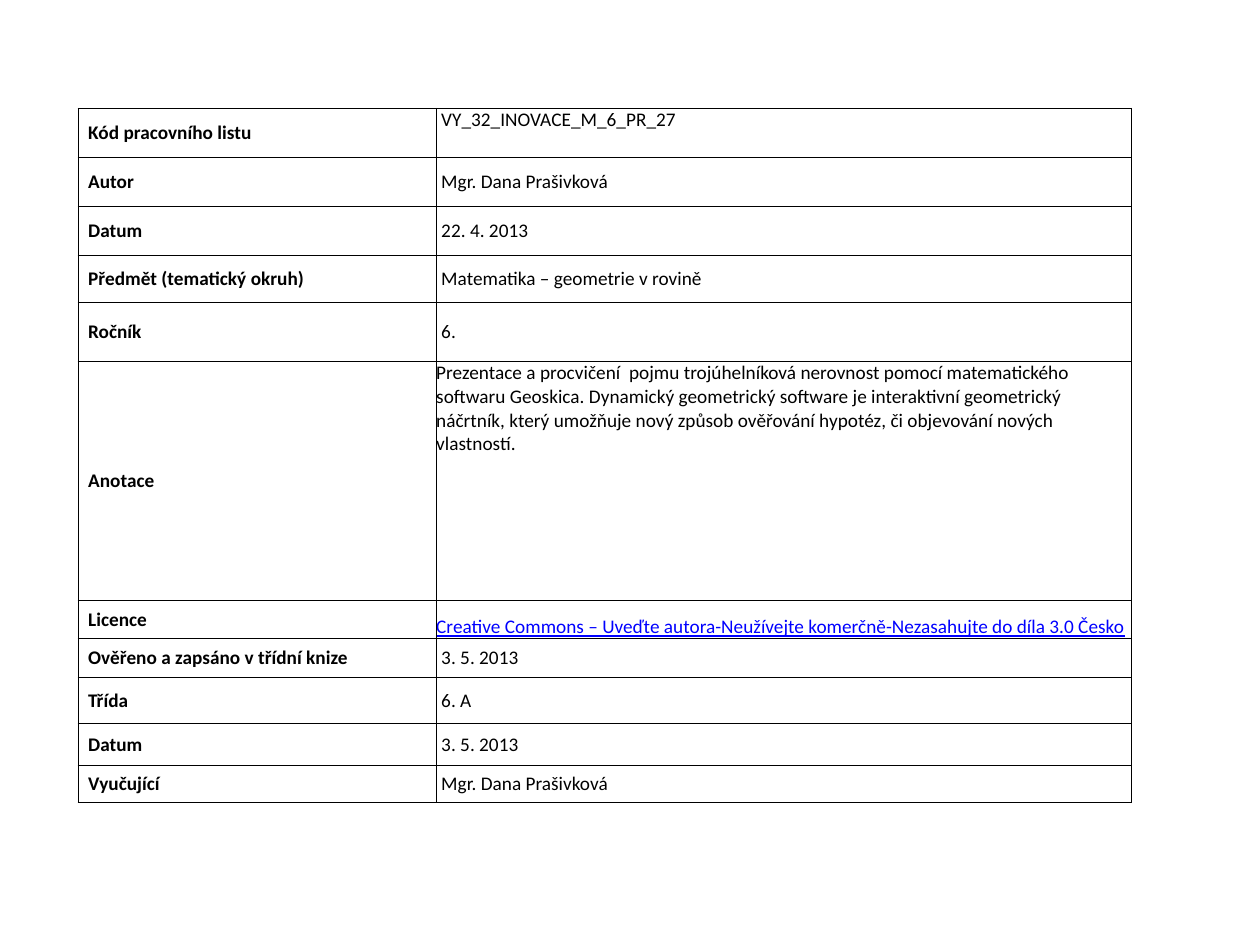
from lxml import etree
from pptx import Presentation
from pptx.dml.color import RGBColor
from pptx.enum.text import MSO_ANCHOR
from pptx.oxml.ns import qn
from pptx.util import Inches, Pt

TOP, MIDDLE, BOTTOM = MSO_ANCHOR.TOP, MSO_ANCHOR.MIDDLE, MSO_ANCHOR.BOTTOM
BLACK, WHITE, LINK_BLUE = "000000", "FFFFFF", "0000FF"
FONT, TEXT_SIZE, BORDER_WIDTH = "Calibri", Pt(11), Pt(0.5)
LABEL_INDENT, VALUE_INDENT = 0.08, 0.04
LABEL_SHARE = 0.34

ANNOTATION = (
    "Prezentace a procvičení  pojmu trojúhelníková nerovnost pomocí matematického "
    "softwaru Geoskica. Dynamický geometrický software je interaktivní geometrický "
    "náčrtník, který umožňuje nový způsob ověřování hypotéz, či objevování nových "
    "vlastností."
)
LICENCE = "Creative Commons – Uveďte autora-Neužívejte komerčně-Nezasahujte do díla 3.0 Česko"

WORKSHEET_ROWS = [
    ("Kód pracovního listu", "VY_32_INOVACE_M_6_PR_27", 0.39, {"anchor": TOP}),
    ("Autor", "Mgr. Dana Prašivková", 0.39, {}),
    ("Datum", "22. 4. 2013", 0.39, {}),
    ("Předmět (tematický okruh)", "Matematika – geometrie v rovině", 0.37, {}),
    ("Ročník", "6.", 0.47, {}),
    ("Anotace", ANNOTATION, 1.9, {"anchor": TOP, "indent": 0}),
    ("Licence", LICENCE, 0.31,
     {"anchor": BOTTOM, "indent": 0, "color": LINK_BLUE, "underline": True}),
    ("Ověřeno a zapsáno v třídní knize", "3. 5. 2013", 0.31, {}),
    ("Třída", "6. A", 0.36, {}),
    ("Datum", "3. 5. 2013", 0.34, {}),
    ("Vyučující", "Mgr. Dana Prašivková", 0.29, {}),
]


def rgb(hex_color):
    """Return the colour for a hex string."""
    return RGBColor.from_string(hex_color)


def draw_borders(cell):
    """Draw a thin black line on all four sides of a cell."""
    properties = cell._tc.get_or_add_tcPr()
    for position, side in enumerate(("a:lnL", "a:lnR", "a:lnT", "a:lnB")):
        line = etree.Element(qn(side), w=str(BORDER_WIDTH))
        fill = etree.SubElement(line, qn("a:solidFill"))
        etree.SubElement(fill, qn("a:srgbClr"), val=BLACK)
        properties.insert(position, line)


def fill_cell(cell, text, indent=VALUE_INDENT, anchor=MIDDLE, color=BLACK,
              bold=False, underline=False):
    """Write one formatted run into a bordered white cell."""
    cell.margin_left = Inches(indent)
    cell.margin_right = cell.margin_top = cell.margin_bottom = 0
    cell.vertical_anchor = anchor
    cell.fill.solid()
    cell.fill.fore_color.rgb = rgb(WHITE)
    run = cell.text_frame.paragraphs[0].add_run()
    run.text = text
    run.font.name = FONT
    run.font.size = TEXT_SIZE
    run.font.bold = bold
    run.font.underline = underline
    run.font.color.rgb = rgb(color)
    draw_borders(cell)


def add_worksheet_table(slide, left, top, width, height):
    """Place the worksheet details as a two-column table in the given box."""
    table = slide.shapes.add_table(
        len(WORKSHEET_ROWS), 2, left, top, width, height).table
    table.first_row = table.horz_banding = False
    label_width = int(width * LABEL_SHARE)
    table.columns[0].width = label_width
    table.columns[1].width = width - label_width
    total = sum(row_height for _, _, row_height, _ in WORKSHEET_ROWS)
    for row, (label, value, row_height, style) in zip(table.rows, WORKSHEET_ROWS):
        row.height = int(height * row_height / total)
        label_cell, value_cell = row.cells
        fill_cell(label_cell, label, indent=LABEL_INDENT, bold=True)
        fill_cell(value_cell, value, **style)


def main():
    """Build and save the worksheet slide."""
    presentation = Presentation()
    presentation.slide_width = Inches(10)
    presentation.slide_height = Inches(7.5)
    slide = presentation.slides.add_slide(presentation.slide_layouts[6])
    add_worksheet_table(slide, Inches(0.62), Inches(0.86), Inches(8.36), Inches(5.51))
    presentation.save("out.pptx")


if __name__ == "__main__":
    main()
